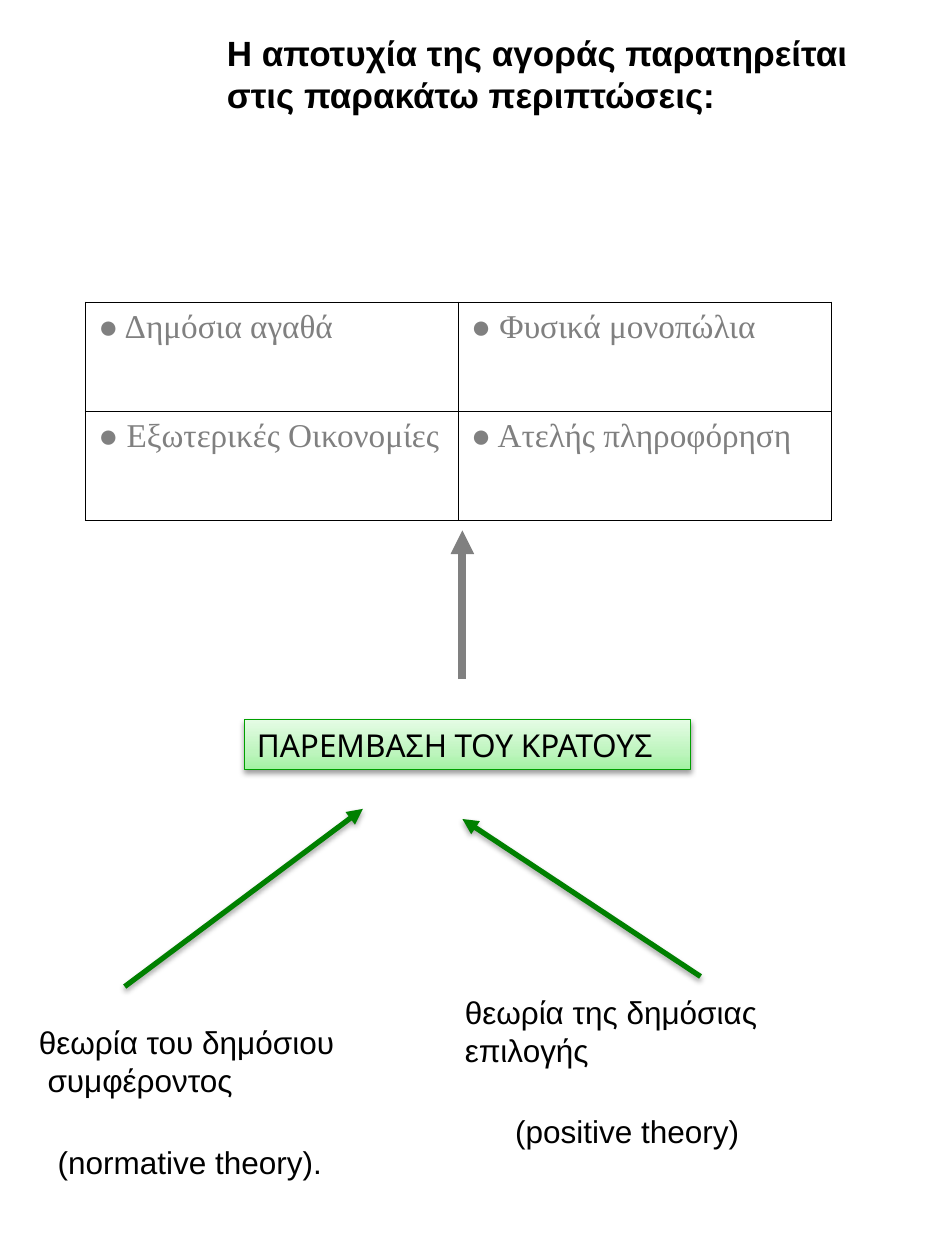
from copy import deepcopy

from lxml.etree import SubElement
from pptx import Presentation
from pptx.dml.color import RGBColor
from pptx.enum.shapes import MSO_CONNECTOR, MSO_SHAPE
from pptx.enum.text import MSO_ANCHOR, MSO_AUTO_SIZE, PP_ALIGN
from pptx.oxml.ns import qn
from pptx.util import Inches, Pt

COLUMNS, ROWS = 75, 100
BLACK, GRAY, GREEN = "000000", "808080", "008000"


def color(value):
    return RGBColor.from_string(value)


class SlideBuilder:
    body_font = "Arial"
    body_size = 18

    def __init__(self, presentation):
        self.column = Inches(7.5) / COLUMNS
        self.row = Inches(10) / ROWS
        presentation.slide_width = Inches(7.5)
        presentation.slide_height = Inches(10)
        self.slide = presentation.slides.add_slide(presentation.slide_layouts[5])

    def place(self, left, top, width, height):
        return (round(left * self.column), round(top * self.row),
                round(width * self.column), round(height * self.row))

    def set_lines(self, frame, lines, size=None, font=None, ink=BLACK, bold=False,
                  align=PP_ALIGN.LEFT):
        frame.text = "\n".join(lines)
        for paragraph in frame.paragraphs:
            paragraph.alignment = align
            paragraph.font.name = font or self.body_font
            paragraph.font.size = Pt(size or self.body_size)
            paragraph.font.bold = bold
            paragraph.font.color.rgb = color(ink)

    def title(self, box, lines):
        shape = self.slide.shapes.title
        shape.left, shape.top, shape.width, shape.height = self.place(*box)
        frame = shape.text_frame
        self.set_lines(frame, lines, size=20, bold=True)
        frame.word_wrap = False
        frame.auto_size = MSO_AUTO_SIZE.NONE
        frame.vertical_anchor = MSO_ANCHOR.TOP

    def text(self, box, *lines):
        frame = self.slide.shapes.add_textbox(*self.place(*box)).text_frame
        self.set_lines(frame, lines)
        frame.word_wrap = False

    def shadow(self, shape, opacity, distance):
        shape_properties = shape._element.spPr
        effects = shape_properties.find(qn("a:effectLst"))
        if effects is None:
            effects = SubElement(shape_properties, qn("a:effectLst"))
        if opacity:
            outer = SubElement(effects, qn("a:outerShdw"), blurRad=str(Pt(3.1)),
                               dist=str(Pt(distance)), dir="5400000", rotWithShape="0")
            ink = SubElement(outer, qn("a:srgbClr"), val=BLACK)
            SubElement(ink, qn("a:alpha"), val=str(opacity * 1000))

    def arrow(self, start, end, ink, width, opacity=0):
        points = self.place(*start, *end)
        line = self.slide.shapes.add_connector(MSO_CONNECTOR.STRAIGHT, *points)
        line.line.color.rgb = color(ink)
        line.line.width = Pt(width)
        SubElement(line.line._get_or_add_ln(), qn("a:tailEnd"), type="triangle")
        self.shadow(line, opacity, 1.8)

    def banner(self, box, label, stops, outline):
        shape = self.slide.shapes.add_shape(MSO_SHAPE.RECTANGLE, *self.place(*box))
        shape.fill.gradient()
        shape.fill.gradient_angle = 90
        stop_list = shape._element.spPr.find(".//" + qn("a:gsLst"))
        stop_list.append(deepcopy(stop_list[-1]))
        for stop, (position, ink) in zip(shape.fill.gradient_stops, stops):
            stop.position = position
            stop.color.rgb = color(ink)
        shape.line.color.rgb = color(outline)
        shape.line.width = Pt(0.75)
        shape.shadow.inherit = False
        self.shadow(shape, 38, 1.6)
        self.set_lines(shape.text_frame, [label], font="Karla")
        shape.text_frame.word_wrap = False

    def border(self, cell, side, width):
        line = SubElement(cell._tc.get_or_add_tcPr(), qn("a:ln" + side),
                          w=str(Pt(width)))
        fill = SubElement(line, qn("a:solidFill"))
        SubElement(fill, qn("a:srgbClr"), val=BLACK)

    def table(self, box, rows):
        last_row, last_column = len(rows) - 1, len(rows[0]) - 1
        table = self.slide.shapes.add_table(len(rows), len(rows[0]),
                                            *self.place(*box)).table
        table.first_row = table.horz_banding = False
        for i, labels in enumerate(rows):
            for j, label in enumerate(labels):
                cell = table.cell(i, j)
                self.set_lines(cell.text_frame, ["● " + label], size=19,
                               font="Times New Roman", ink=GRAY,
                               align=PP_ALIGN.JUSTIFY)
                outer = {"L": j == 0, "R": j == last_column,
                         "T": i == 0, "B": i == last_row}
                for side, is_outer in outer.items():
                    self.border(cell, side, 1 if is_outer else 0.75)
                cell.fill.background()


def main():
    presentation = Presentation()
    builder = SlideBuilder(presentation)
    builder.title((17, 2, 52.4, 7.7), ["Η αποτυχία της αγοράς παρατηρείται",
                                       "στις παρακάτω περιπτώσεις:"])
    builder.table((6.8, 24, 59.2, 17.3), [
        ["Δημόσια αγαθά", "Φυσικά μονοπώλια"],
        ["Εξωτερικές Οικονομίες", "Ατελής πληροφόρηση"],
    ])
    builder.arrow((36.7, 53.9), (36.7, 42.1), GRAY, 4.5)
    builder.banner((19.4, 57.1, 35.4, 4), "ΠΑΡΕΜΒΑΣΗ ΤΟΥ ΚΡΑΤΟΥΣ",
                   [(0, "A2F3A2"), (0.35, "BEF5BE"), (1, "E5FCE5")], "00A000")
    builder.text((2.1, 80.7, 25.7, 7.1), "θεωρία του δημόσιου", " συμφέροντος")
    builder.text((35.9, 78.3, 26.1, 7.1), "θεωρία της δημόσιας", "επιλογής")
    builder.arrow((9.9, 78.3), (28.8, 64.2), GREEN, 3, opacity=35)
    builder.arrow((55.6, 77.5), (36.7, 65), GREEN, 3, opacity=35)
    builder.text((3.6, 90.2, 23.9, 4), "(normative theory).")
    builder.text((39.9, 87.8, 20.7, 4), "(positive theory)")
    presentation.save("out.pptx")


if __name__ == "__main__":
    main()
